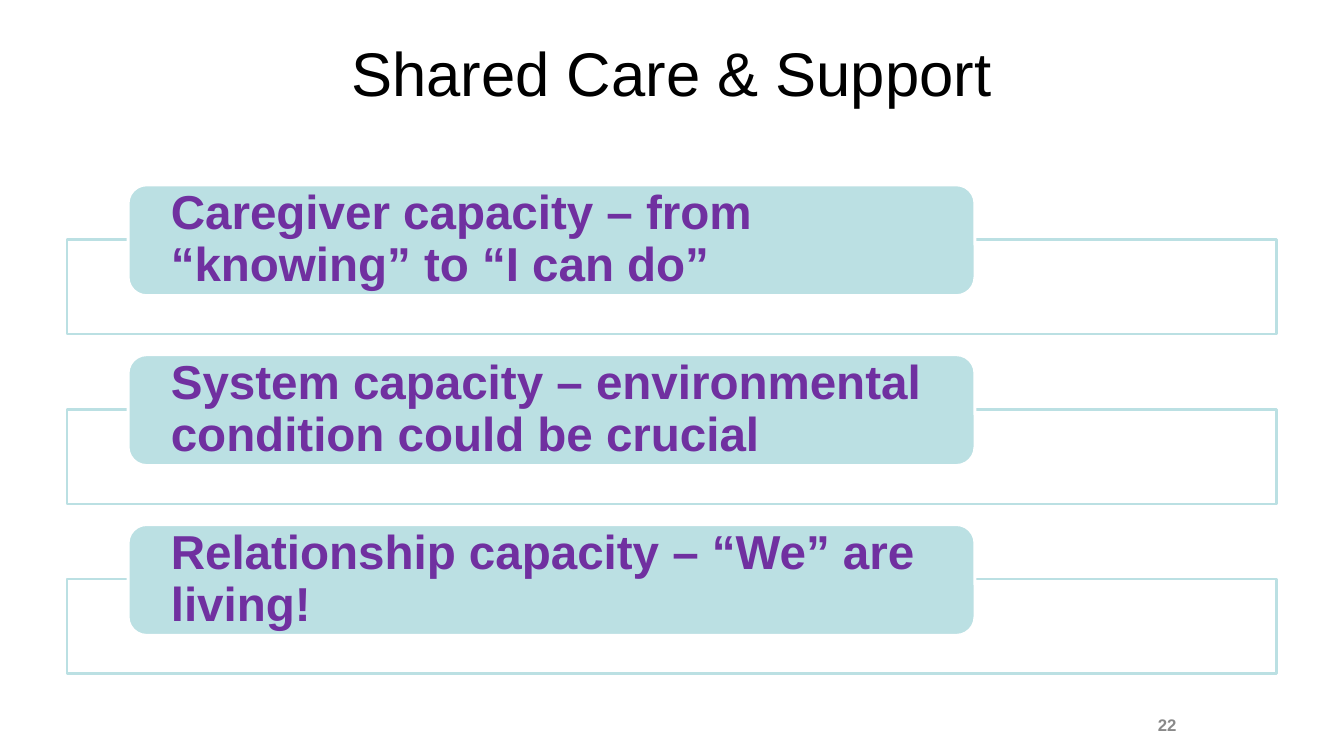
from lxml import etree
from pptx import Presentation
from pptx import util as u
from pptx.dml.color import RGBColor
from pptx.enum import shapes, text
from pptx.oxml.ns import qn

WHITE = RGBColor(0xFF, 0xFF, 0xFF)
BLACK = RGBColor(0x00, 0x00, 0x00)
PALE_TEAL = RGBColor(0xBB, 0xE0, 0xE3)
PURPLE = RGBColor(0x70, 0x30, 0xA0)
GREY = RGBColor(0x89, 0x89, 0x89)

CAPACITIES = [
    "Caregiver capacity – from “knowing” to “I can do”",
    "System capacity – environmental condition could be crucial",
    "Relationship capacity – “We” are living!",
]
FIRST_TOP = 4.66
PITCH = 4.28
BAR_DROP = 1.37


class CareSlide:
    font = "Arial"
    outline = u.Pt(2)

    def __init__(self, deck):
        self.slide = deck.slides.add_slide(deck.slide_layouts[5])

    def set_text(self, holder, words, size, color, bold=False, frame_format=None, **paragraph_format):
        frame = holder.text_frame
        frame.text = words
        paragraph = frame.paragraphs[0]
        font_format = {"name": self.font, "size": u.Pt(size), "bold": bold}
        frame_format = {"word_wrap": True, "auto_size": text.MSO_AUTO_SIZE.NONE, **(frame_format or {})}
        for target, values in (
            (frame, frame_format),
            (paragraph, paragraph_format),
            (paragraph.font, font_format),
        ):
            for key, value in values.items():
                setattr(target, key, value)
        paragraph.font.color.rgb = color

    def title(self, words, *box):
        heading = self.slide.shapes.title
        for side, length in zip(("left", "top", "width", "height"), box):
            setattr(heading, side, u.Cm(length))
        self.set_text(heading, words, 44, BLACK, alignment=text.PP_ALIGN.CENTER,
                      frame_format={"vertical_anchor": text.MSO_ANCHOR.TOP})

    def panel(self, kind, fill, line, *box):
        panel = self.slide.shapes.add_shape(kind, *map(u.Cm, box))
        panel.shadow.inherit = False
        panel.fill.solid()
        panel.fill.fore_color.rgb = fill
        panel.line.color.rgb = line
        panel.line.width = self.outline
        return panel

    def bar(self, *box):
        bar = self.panel(shapes.MSO_SHAPE.RECTANGLE, WHITE, PALE_TEAL, *box)
        fill_color = bar.element.spPr.find(qn("a:solidFill"))[0]
        etree.SubElement(fill_color, qn("a:alpha"), val="90000")

    def label(self, words, *box):
        label = self.panel(shapes.MSO_SHAPE.ROUNDED_RECTANGLE, PALE_TEAL, WHITE, *box)
        insets = {"margin_left": u.Cm(0.94), "margin_right": u.Cm(0.94),
                  "margin_top": 0, "margin_bottom": 0}
        self.set_text(label, words, 34, PURPLE, bold=True, alignment=text.PP_ALIGN.LEFT,
                      line_spacing=0.9,
                      frame_format={"vertical_anchor": text.MSO_ANCHOR.MIDDLE, **insets})

    def page_number(self, number, *box):
        page = self.slide.shapes.add_textbox(*map(u.Cm, box))
        self.set_text(page, number, 12, GREY, bold=True, alignment=text.PP_ALIGN.RIGHT,
                      frame_format={"vertical_anchor": text.MSO_ANCHOR.MIDDLE})


def main():
    deck = Presentation()
    deck.slide_width, deck.slide_height = u.Cm(33.87), u.Cm(19.05)
    care = CareSlide(deck)
    care.title("Shared Care & Support", 1.69, 0.76, 30.48, 3.18)
    for row, capacity in enumerate(CAPACITIES):
        top = FIRST_TOP + row * PITCH
        care.bar(1.69, top + BAR_DROP, 30.48, 2.39)
        care.label(capacity, 3.23, top, 21.34, 2.79)
    care.page_number("22", 22, 17.75, 7.9, 1.02)
    deck.save("out.pptx")


if __name__ == "__main__":
    main()
